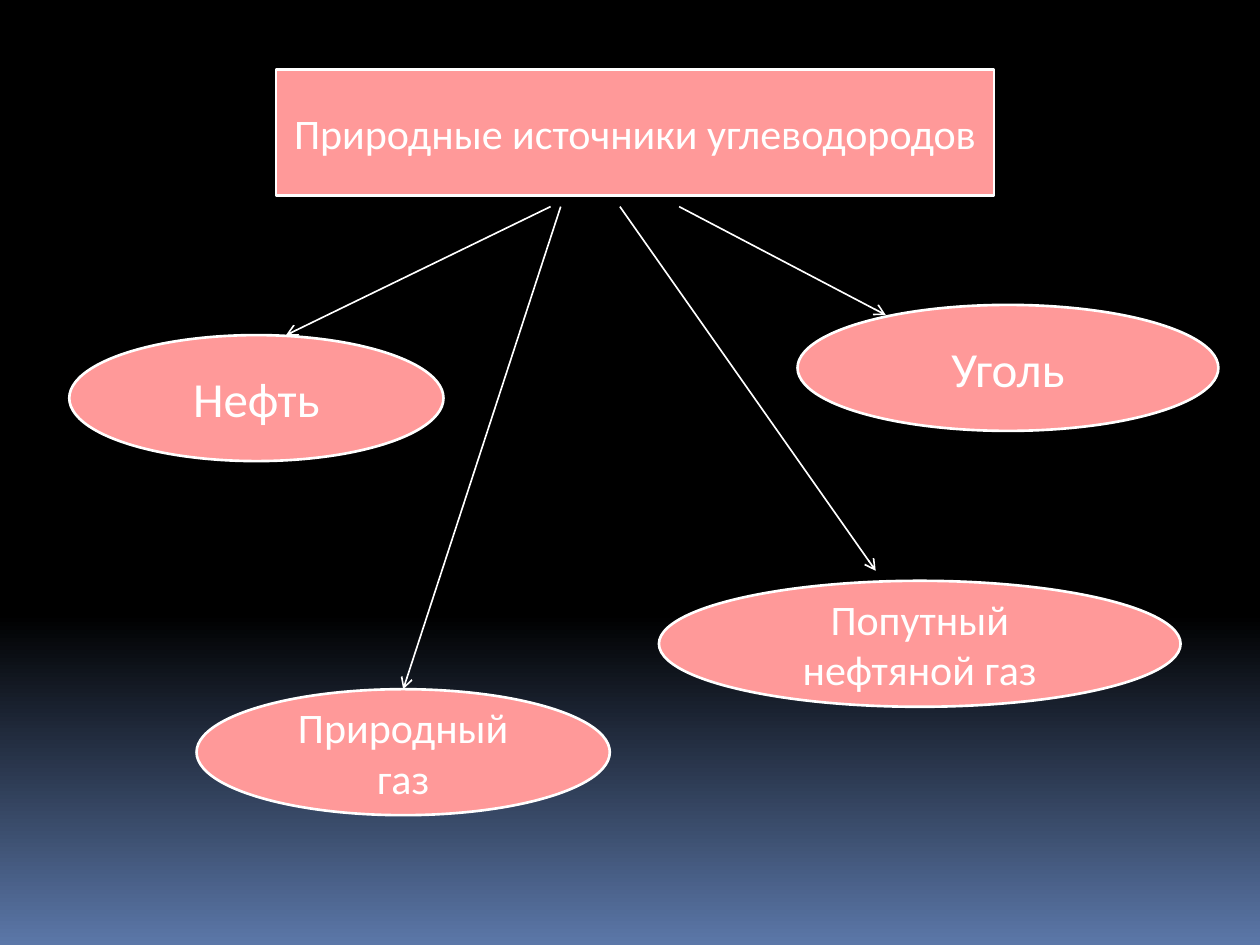
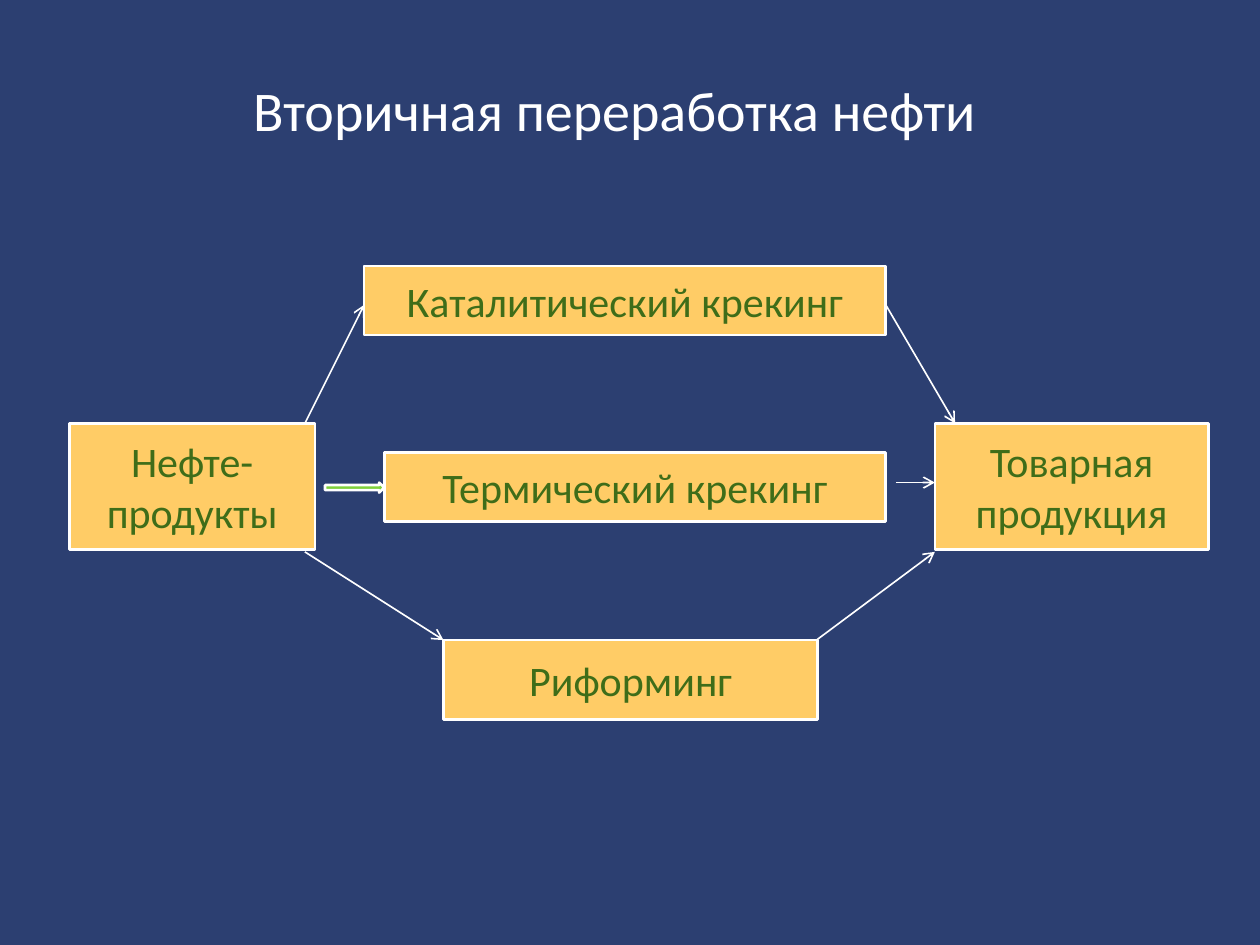
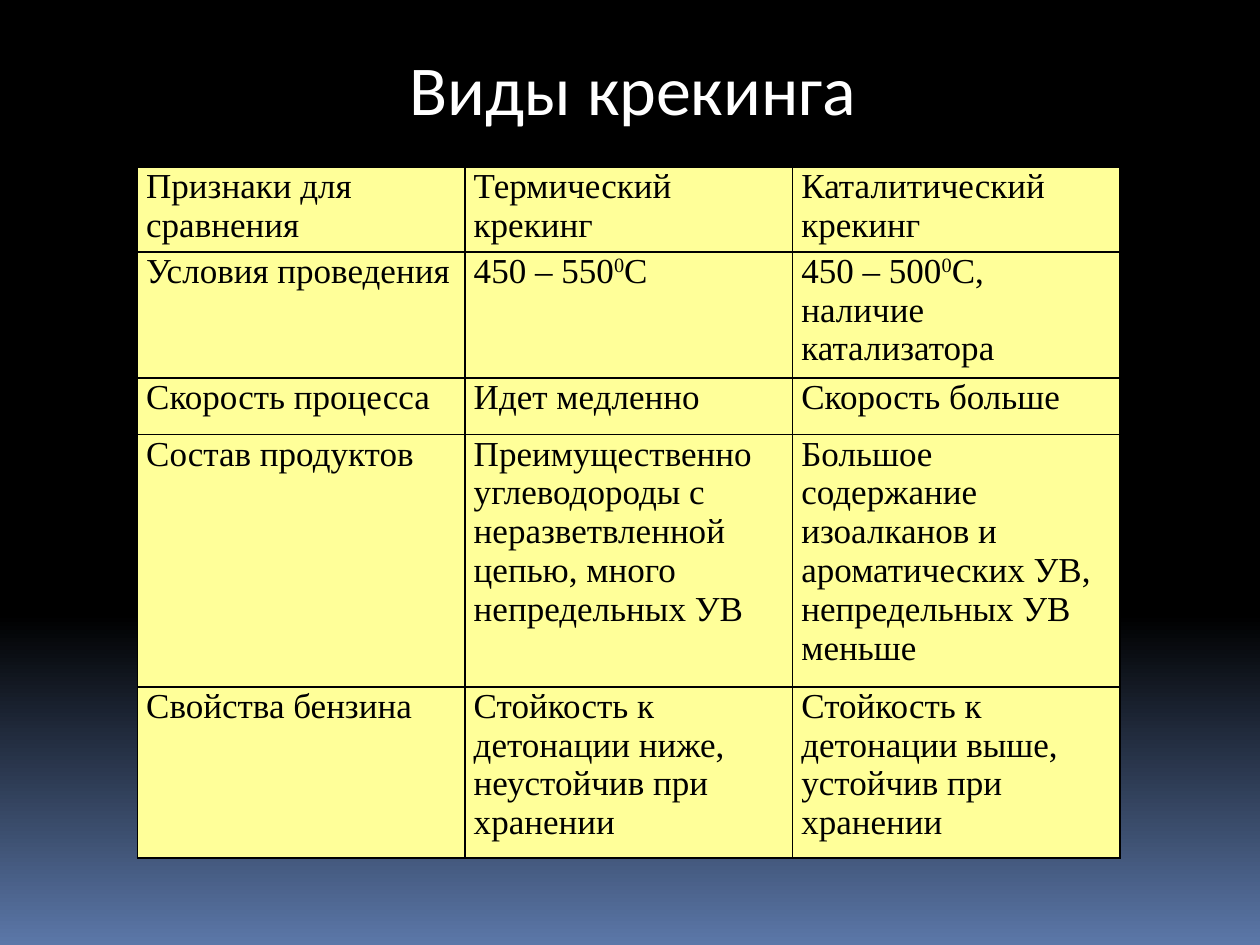
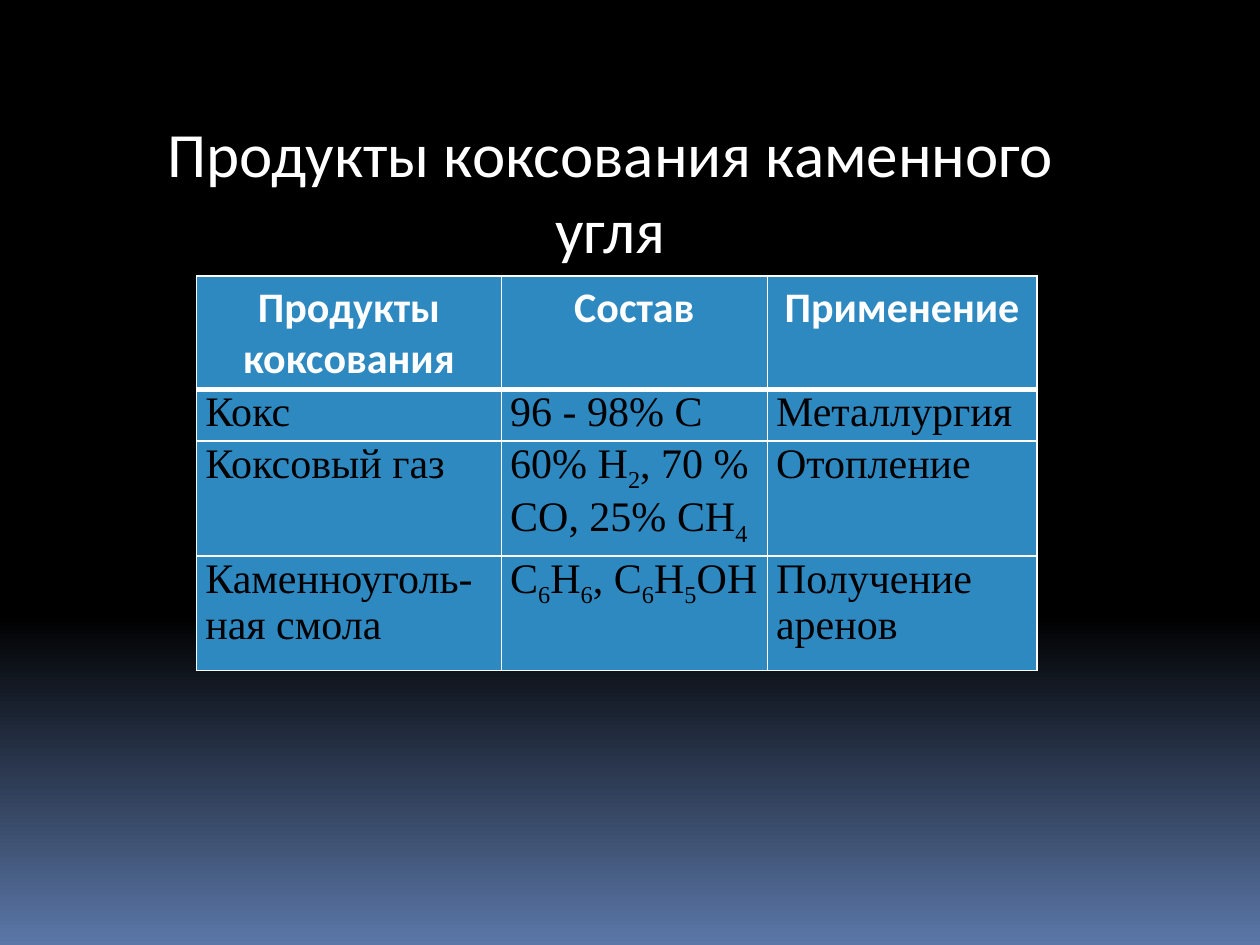
from copy import deepcopy
from dataclasses import dataclass

from lxml.etree import SubElement
from pptx import Presentation
from pptx.dml.color import RGBColor
from pptx.enum.shapes import MSO_CONNECTOR, MSO_SHAPE
from pptx.enum.text import MSO_ANCHOR, PP_ALIGN
from pptx.oxml.ns import qn
from pptx.util import Inches, Pt

WHITE = RGBColor(0xFF, 0xFF, 0xFF)
BLACK = RGBColor(0x00, 0x00, 0x00)
SKY = RGBColor(0x5B, 0x77, 0xA8)
NAVY = RGBColor(0x2C, 0x3F, 0x71)
PINK = RGBColor(0xFF, 0x99, 0x99)
AMBER = RGBColor(0xFF, 0xCC, 0x66)
DARK_GREEN = RGBColor(0x3F, 0x6D, 0x19)
LIME = RGBColor(0x7F, 0xD1, 0x3B)
CREAM = RGBColor(0xFF, 0xFF, 0x99)
BLUE = RGBColor(0x2F, 0x89, 0xC1)

SANS = "Calibri"
SERIF = "Times New Roman"


@dataclass
class Node:
    """A labelled box or oval of a scheme; lengths in inches."""
    text: str
    left: float
    top: float
    width: float
    height: float = 1
    size: int = 24
    outline: MSO_SHAPE = MSO_SHAPE.RECTANGLE


@dataclass
class Arrow:
    start: tuple[float, float]
    end: tuple[float, float]


@dataclass
class Grid:
    """A table; in cell texts, bars enclose raised or lowered characters."""
    left: float
    top: float
    columns: list[float]
    heights: list[float]
    rows: list[list[str]]
    size: int
    fill: RGBColor
    border: RGBColor
    baseline: int
    styled_header: bool = False


def style_text(paragraph, size: int, color: RGBColor, face: str = SANS,
               align: PP_ALIGN = PP_ALIGN.CENTER, bold: bool = False) -> None:
    paragraph.alignment = align
    font = paragraph.font
    font.name, font.size, font.bold = face, Pt(size), bold
    font.color.rgb = color


def set_gradient_background(master) -> None:
    """Black for the upper 65 %, then fading to blue at the foot."""
    fill = master.background.fill
    fill.gradient()
    fill.gradient_angle = 270
    for stop, color, position in zip(fill.gradient_stops, (BLACK, SKY), (0, 1)):
        stop.color.rgb = color
        stop.position = position
    stops = master.element.find(".//" + qn("a:gsLst"))
    middle = deepcopy(stops[0])
    middle.set("pos", "65000")
    stops.insert(1, middle)


def add_title(slide, text: str, left: float, top: float, width: float,
              height: float, size: int, right_inset: float = 0.1) -> None:
    title = slide.shapes.add_textbox(*map(Inches, (left, top, width, height)))
    frame = title.text_frame
    frame.word_wrap = True
    frame.margin_right = Inches(right_inset)
    frame.text = text
    style_text(frame.paragraphs[0], size, WHITE)


def add_node(slide, node: Node, fill: RGBColor, color: RGBColor = WHITE) -> None:
    box = slide.shapes.add_shape(
        node.outline, *map(Inches, (node.left, node.top, node.width, node.height)))
    box.shadow.inherit = False
    box.fill.solid()
    box.fill.fore_color.rgb = fill
    box.line.color.rgb = WHITE
    box.line.width = Pt(1.5)
    if node.text:
        frame = box.text_frame
        frame.word_wrap = True
        frame.vertical_anchor = MSO_ANCHOR.MIDDLE
        frame.text = node.text
        style_text(frame.paragraphs[0], node.size, color)


def add_arrow(slide, arrow: Arrow) -> None:
    connector = slide.shapes.add_connector(
        MSO_CONNECTOR.STRAIGHT, *map(Inches, arrow.start + arrow.end))
    connector.line.color.rgb = WHITE
    connector.line.width = Pt(0.94)
    SubElement(connector.line._get_or_add_ln(), qn("a:tailEnd"), type="arrow")
    SubElement(connector._element.spPr, qn("a:effectLst"))


def add_border(cell, side: str, color: RGBColor, width: float) -> None:
    border = SubElement(cell._tc.get_or_add_tcPr(), qn(f"a:ln{side}"), w=str(Pt(width)))
    fill = SubElement(border, qn("a:solidFill"))
    SubElement(fill, qn("a:srgbClr"), val=str(color))


def fill_cell(cell, text: str, grid: Grid, row: int) -> None:
    header = grid.styled_header and row == 0
    # The rule under a styled header is thicker
    top = 3 if grid.styled_header and row == 1 else 1
    for side, width in {"L": 1, "R": 1, "T": top, "B": 3 if header else 1}.items():
        add_border(cell, side, grid.border, width)
    cell.fill.solid()
    cell.fill.fore_color.rgb = grid.fill

    paragraph = cell.text_frame.paragraphs[0]
    for index, piece in enumerate(text.split("|")):
        if piece:
            run = paragraph.add_run()
            run.text = piece
            if index % 2:
                run._r.get_or_add_rPr().set("baseline", str(grid.baseline * 1000))
    if header:
        style_text(paragraph, grid.size, WHITE, bold=True)
    else:
        cell.margin_left = cell.margin_right = Inches(0.07)
        cell.margin_top = cell.margin_bottom = 0
        style_text(paragraph, grid.size, BLACK, SERIF, PP_ALIGN.LEFT)


def add_grid(slide, grid: Grid) -> None:
    table = slide.shapes.add_table(
        len(grid.rows), len(grid.columns), Inches(grid.left), Inches(grid.top),
        Inches(sum(grid.columns)), Inches(sum(grid.heights))).table
    table.first_row = table.horz_banding = False
    for column, width in zip(table.columns, grid.columns):
        column.width = Inches(width)
    for row, (texts, height) in enumerate(zip(grid.rows, grid.heights)):
        table.rows[row].height = Inches(height)
        for column, text in enumerate(texts):
            fill_cell(table.cell(row, column), text, grid, row)


# Slide 1: natural sources of hydrocarbons
SOURCES = [
    Node("Природные источники углеводородов", 2.19, 0.55, 5.7),
    Node("Нефть", 0.55, 2.66, 2.97, size=28, outline=MSO_SHAPE.OVAL),
    Node("Уголь", 6.33, 2.42, 3.34, size=28, outline=MSO_SHAPE.OVAL),
    Node("Природный газ", 1.56, 5.47, 3.28, outline=MSO_SHAPE.OVAL),
    Node("Попутный нефтяной газ", 5.23, 4.61, 4.14, outline=MSO_SHAPE.OVAL),
]
SOURCE_ARROWS = [
    Arrow((5.39, 1.64), (7.03, 2.5)),
    Arrow((4.37, 1.64), (2.27, 2.66)),
    Arrow((4.45, 1.64), (3.2, 5.47)),
    Arrow((4.92, 1.64), (6.95, 4.53)),
]

# Slide 2: secondary oil refining
REFINING = [
    Node("Нефте-продукты", 0.55, 3.36, 1.95),
    Node("Товарная продукция", 7.42, 3.36, 2.17),
    Node("Каталитический крекинг", 2.89, 2.11, 4.14, 0.55),
    Node("Термический крекинг", 3.05, 3.59, 3.98, 0.55),
    Node("Риформинг", 3.52, 5.08, 2.97, 0.63),
]
THERMAL_FEED = Node("", 2.58, 3.83, 0.47, 0.08, outline=MSO_SHAPE.RIGHT_ARROW)
REFINING_ARROWS = [
    Arrow((2.42, 4.38), (3.52, 5.08)),
    Arrow((2.42, 3.36), (2.89, 2.42)),
    Arrow((7.03, 2.42), (7.58, 3.36)),
    Arrow((7.11, 3.83), (7.42, 3.83)),
    Arrow((6.48, 5.08), (7.42, 4.38)),
]

# Slide 3: kinds of cracking
CRACKING = Grid(
    1.09, 1.33, [2.6] * 3, [0.67, 1, 0.45, 2, 1.36],
    [
        ["Признаки для сравнения", "Термический крекинг", "Каталитический крекинг"],
        ["Условия проведения", "450 – 550|0|С", "450 – 500|0|С, наличие катализатора"],
        ["Скорость процесса", "Идет медленно", "Скорость больше"],
        ["Состав продуктов",
         "Преимущественно углеводороды с неразветвленной цепью, много непредельных УВ",
         "Большое содержание изоалканов и ароматических УВ, непредельных УВ меньше"],
        ["Свойства бензина",
         "Стойкость к детонации ниже, неустойчив при хранении",
         "Стойкость к детонации выше, устойчив при хранении"],
    ],
    size=20, fill=CREAM, border=BLACK, baseline=30)

# Slide 4: products of coal coking
COKING = Grid(
    1.56, 2.19, [2.42, 2.11, 2.14], [0.9, 0.41, 0.91, 0.91],
    [
        ["Продукты коксования", "Состав", "Применение"],
        ["Кокс", "96 - 98% С", "Металлургия"],
        ["Коксовый газ", "60% Н|2|, 70 % СО, 25% СН|4|", "Отопление"],
        ["Каменноуголь-ная смола", "С|6|Н|6|, С|6|Н|5|ОН", "Получение аренов"],
    ],
    size=24, fill=BLUE, border=WHITE, baseline=-25, styled_header=True)


def main() -> None:
    deck = Presentation()
    deck.slide_width, deck.slide_height = Inches(10), Inches(7.5)
    set_gradient_background(deck.slide_master)
    blank = deck.slide_layouts[6]
    sources, refining, cracking, coking = (
        deck.slides.add_slide(blank) for _ in range(4))

    for node in SOURCES:
        add_node(sources, node, PINK)
    for arrow in SOURCE_ARROWS:
        add_arrow(sources, arrow)

    refining.background.fill.solid()
    refining.background.fill.fore_color.rgb = NAVY
    for node in REFINING:
        add_node(refining, node, AMBER, DARK_GREEN)
    add_node(refining, THERMAL_FEED, LIME)
    for arrow in REFINING_ARROWS:
        add_arrow(refining, arrow)
    add_title(refining, "Вторичная переработка нефти", 1.87, 0.55, 6.02, 0.64, 32)

    add_title(cracking, "Виды крекинга", 2.19, 0.31, 5.94, 0.77, 40, right_inset=0.37)
    add_grid(cracking, CRACKING)

    add_title(coking, "Продукты коксования каменного угля", 0.78, 0.86, 8.13, 1.92, 36)
    add_grid(coking, COKING)

    deck.save("out.pptx")


if __name__ == "__main__":
    main()
